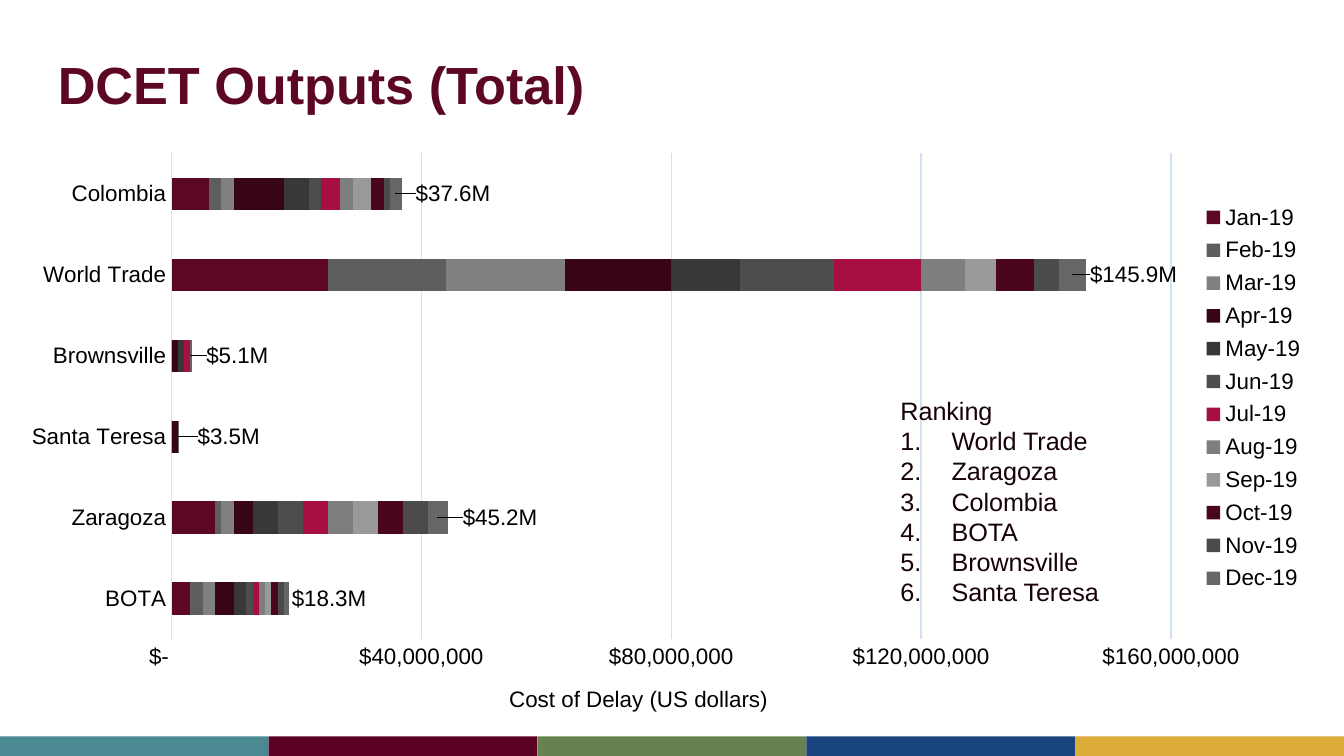
"""Build the DCET total outputs slide with its stacked delay cost chart."""
from lxml import etree
from pptx import Presentation
from pptx import util as u
from pptx.chart import data as chart_data
from pptx.dml import color
from pptx.enum import chart as ch, shapes, text
from pptx.oxml import ns

COLORS = {
    "background": "FFFFFE", "title": "5C0823", "ranking": "160208",
    "black": "000000", "grid": "D2E1F6",
}
STRIPES = ["4B8992", "5C0024", "678250", "19447E", "DDAB37"]
BRIDGES = ["BOTA", "Zaragoza", "Santa Teresa", "Brownsville", "World Trade", "Colombia"]
MONTHS = {
    "Jan-19": ("5C0823", [3, 7, 0, 0, 25, 6]),
    "Feb-19": ("5E5E5E", [2, 1, 0, 0, 19, 2]),
    "Mar-19": ("808080", [2, 2, 0, 0, 19, 2]),
    "Apr-19": ("370515", [3, 3, 1, 1, 17, 8]),
    "May-19": ("383838", [2, 4, 0, 1, 11, 4]),
    "Jun-19": ("4D4D4D", [1, 4, 0, 0, 15, 2]),
    "Jul-19": ("A70F40", [1, 4, 0, 1, 14, 3]),
    "Aug-19": ("7E7E7E", [1, 4, 0, 0, 7, 2]),
    "Sep-19": ("999999", [1, 4, 0, 0, 5, 3]),
    "Oct-19": ("4A061C", [1, 4, 0, 0, 6, 2]),
    "Nov-19": ("4B4B4B", [1, 4, 0, 0, 4, 1]),
    "Dec-19": ("666666", [0.85, 3.22, 0.17, 0.21, 4.45, 1.84]),
}
TOTALS = [("$18.3M", 0.032), ("$45.2M", 0.047), ("$3.5M", 0.038),
          ("$5.1M", 0.035), ("$145.9M", 0.046), ("$37.6M", 0.043)]
RANKING = ["World Trade", "Zaragoza", "Colombia", "BOTA", "Brownsville", "Santa Teresa"]
DOLLARS = '_("$"* #,##0_);_("$"* \\(#,##0\\);_("$"* "-"??_);_(@_)'
C15 = "http://schemas.microsoft.com/office/drawing/2012/chart"


def write(paragraph, words, size=12, fill="black", bold=False):
    run = paragraph.add_run()
    run.text = words
    run.font.name = "Arial"
    run.font.size = u.Pt(size)
    run.font.bold = bold
    run.font.color.rgb = color.RGBColor.from_string(COLORS[fill])


def place(parent, position, **values):
    for old in parent.findall(ns.qn("c:layout")):
        parent.remove(old)
    layout = etree.Element(ns.qn("c:layout"))
    parent.insert(position, layout)
    manual = etree.SubElement(layout, ns.qn("c:manualLayout"))
    for tag, value in values.items():
        etree.SubElement(manual, ns.qn("c:" + tag)).set("val", str(value))


deck = Presentation()
deck.slide_width, deck.slide_height = u.Inches(10), u.Inches(5.625)
slide = deck.slides.add_slide(deck.slide_layouts[1])
slide.background.fill.solid()
slide.background.fill.fore_color.rgb = color.RGBColor.from_string(COLORS["background"])

for index, fill in enumerate(STRIPES):
    stripe = slide.shapes.add_shape(shapes.MSO_SHAPE.RECTANGLE, u.Inches(2 * index),
                                    u.Inches(5.48), u.Inches(2), u.Inches(0.15))
    stripe.shadow.inherit = False
    stripe.fill.solid()
    stripe.fill.fore_color.rgb = color.RGBColor.from_string(fill)
    stripe.line.fill.background()
    stripe._element.nvSpPr.cNvPr.set("id", str(20 + index))
    deck.slide_master.shapes._spTree.append(stripe._element)

title = slide.shapes.title
title.left, title.top, title.width, title.height = map(u.Inches, (0.33, 0.3, 9.35, 0.7))
title.text_frame.vertical_anchor = text.MSO_ANCHOR.MIDDLE
title.text_frame.auto_size = text.MSO_AUTO_SIZE.NONE
heading = title.text_frame.paragraphs[0]
heading.alignment = text.PP_ALIGN.LEFT
heading.line_spacing = 0.9
write(heading, "DCET Outputs (Total)", size=28, fill="title", bold=True)

costs = chart_data.CategoryChartData(number_format=DOLLARS)
costs.categories = BRIDGES
for month, (_, millions) in MONTHS.items():
    costs.add_series(month, [round(value * 1000000) for value in millions])
delay = slide.shapes.add_chart(ch.XL_CHART_TYPE.BAR_STACKED, u.Inches(0.06), u.Inches(1),
                               u.Inches(9.89), u.Inches(4.41), costs).chart
delay.has_title = False
delay.font.name = "Arial"
delay.font.size = u.Pt(12)
delay.font.color.rgb = color.RGBColor.from_string(COLORS["black"])

bars = delay.plots[0]
bars.gap_width, bars.overlap = 150, 100
bars.vary_by_categories = False
for series, (fill, _) in zip(bars.series, MONTHS.values()):
    series.format.fill.solid()
    series.format.fill.fore_color.rgb = color.RGBColor.from_string(fill)
    series.invert_if_negative = False

december = bars.series[len(MONTHS) - 1]
december.data_labels.show_value = True
december.data_labels.number_format = DOLLARS
december.data_labels.number_format_is_linked = False
for index, (total, _) in enumerate(TOTALS):
    label = december.points[index].data_label
    label.text_frame.word_wrap = False
    write(label.text_frame.paragraphs[0], total)
    label.position = ch.XL_LABEL_POSITION.CENTER
labels = december.data_labels._element
for entry, (_, shift) in zip(labels.findall(ns.qn("c:dLbl")), TOTALS):
    place(entry, 1, x=shift, y=0)
for leader in labels.findall(ns.qn("c:showLeaderLines")):
    labels.remove(leader)
extension = etree.SubElement(etree.SubElement(labels, ns.qn("c:extLst")), ns.qn("c:ext"))
extension.set("uri", "{CE6537A1-D6FC-4f65-9D91-7224C49458BB}")
etree.SubElement(extension, "{%s}showLeaderLines" % C15, nsmap={"c15": C15}).set("val", "0")

bridge_axis, cost_axis = delay.category_axis, delay.value_axis
for axis in (bridge_axis, cost_axis):
    axis.major_tick_mark = axis.minor_tick_mark = ch.XL_TICK_MARK.NONE
cost_axis.minimum_scale, cost_axis.maximum_scale = 0, 160000000
cost_axis.major_unit = 40000000
cost_axis.tick_labels.number_format = DOLLARS
cost_axis.tick_labels.number_format_is_linked = False
cost_axis.format.line.fill.background()
cost_axis.has_major_gridlines = True
for line in (bridge_axis.format.line, cost_axis.major_gridlines.format.line):
    line.color.rgb = color.RGBColor.from_string(COLORS["grid"])
    line.width = u.Pt(0.75)
caption = cost_axis.axis_title
write(caption.text_frame.paragraphs[0], "Cost of Delay (US dollars)")
place(caption._element, 1, xMode="edge", yMode="edge", x=0.374, y=0.923)

delay.has_legend = True
delay.legend.position = ch.XL_LEGEND_POSITION.RIGHT
delay.legend.include_in_layout = False
place(delay.legend._element, 1, xMode="edge", yMode="edge", x=0.887, y=0.105, w=0.1, h=0.68)
place(delay._chartSpace.chart.plotArea, 0, layoutTarget="inner", xMode="edge", yMode="edge",
      x=0.123, y=0.032, w=0.752, h=0.82)

ranking = slide.placeholders[1]
slide.shapes._spTree.append(ranking._element)
ranking.left, ranking.top, ranking.width, ranking.height = map(u.Inches, (6.6, 2.89, 2.1, 1.92))
ranking.text_frame.auto_size = text.MSO_AUTO_SIZE.NONE
for index, words in enumerate(["Ranking"] + RANKING):
    row = ranking.text_frame.add_paragraph() if index else ranking.text_frame.paragraphs[0]
    row.space_before = u.Pt(0)
    row.line_spacing = u.Pt(16.2)
    properties = row._p.get_or_add_pPr()
    indent = u.Inches(0.38) if index else 0
    properties.set("marL", str(indent))
    properties.set("indent", str(-indent))
    if index:
        etree.SubElement(properties, ns.qn("a:buFont")).set("typeface", "Arial")
        etree.SubElement(properties, ns.qn("a:buAutoNum")).set("type", "arabicPeriod")
    else:
        etree.SubElement(properties, ns.qn("a:buNone"))
    write(row, words, size=13.5, fill="ranking")

deck.save("out.pptx")
